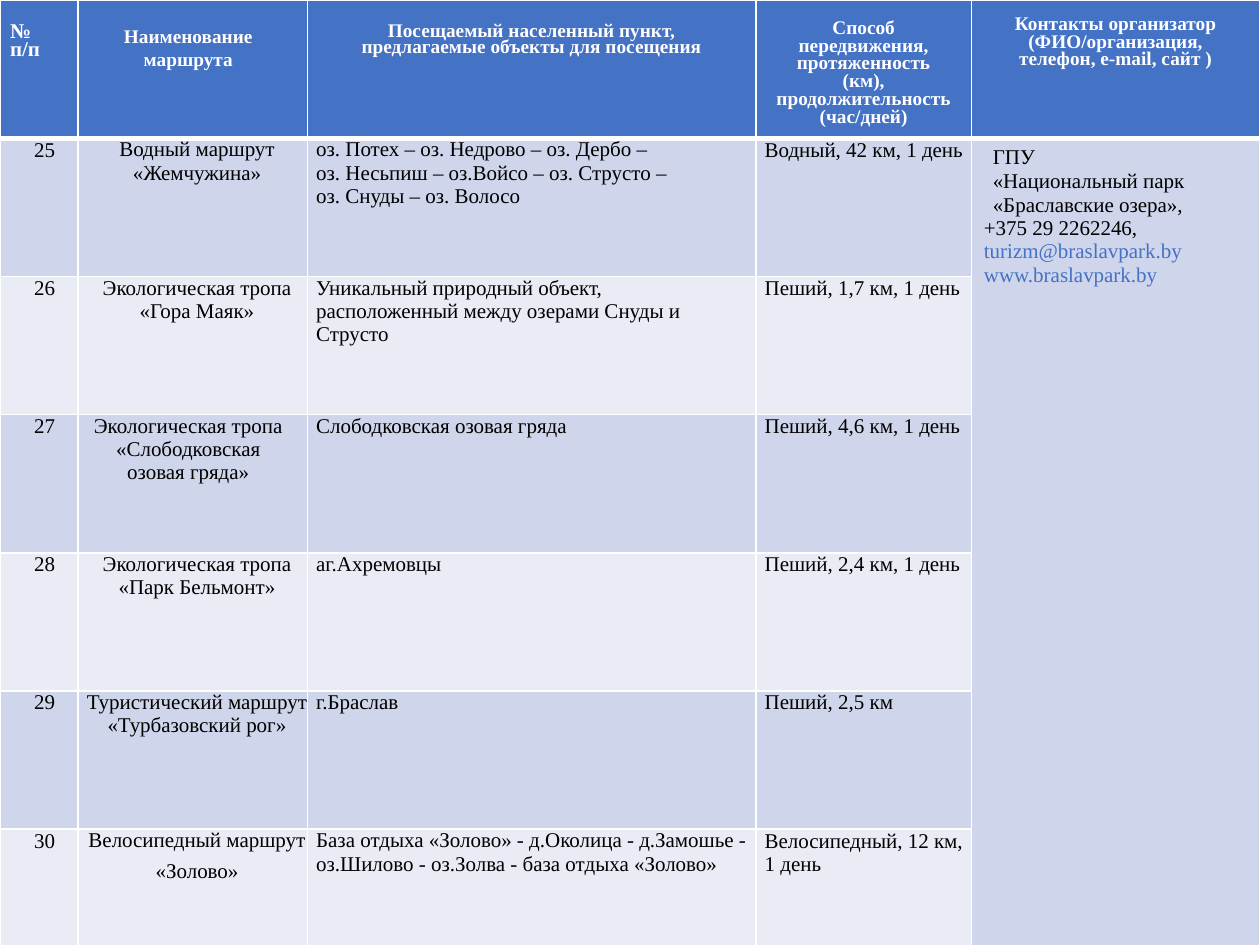
from dataclasses import dataclass
from typing import Optional

from lxml import etree
from pptx import Presentation
from pptx import util as u
from pptx.dml.color import RGBColor
from pptx.enum import text
from pptx.oxml.ns import qn

WIDTH, HEIGHT = 10, 7.5
COLUMN_SHARES = [0.062, 0.182, 0.356, 0.171, 0.229]
ROW_COUNT = 7
ROW_HEIGHT = 7.68 / ROW_COUNT
FONT = "Times New Roman"
COLORS = {
    "header": "4472C4", "odd": "CFD5EA", "even": "E9EBF5",
    "text": "000000", "link": "4472C4", "white": "FFFFFF",
}
LEFT, CENTER = text.PP_ALIGN.LEFT, text.PP_ALIGN.CENTER


@dataclass
class CellStyle:
    """Spacing is in points when a Pt length, in lines when a float."""
    align: text.PP_ALIGN = LEFT
    spacing: Optional[float] = u.Pt(13.3)
    left: float = 0.07
    right: float = 0
    top: float = 0
    size: float = 12
    color: str = "text"
    bold: bool = False
    space_before: float = 0


@dataclass
class Route:
    number: str
    name: str
    places: str
    travel: str
    name_right: float = 0
    places_right: float = 0


def header_style(spacing: float, left: float, right: float, top: float,
                 size: float = 11, align: text.PP_ALIGN = CENTER) -> CellStyle:
    return CellStyle(align, spacing, left, right, top, size, "white", True)


HEADERS = [
    ("№\nп/п", header_style(0.77, 0.08, 0, 0.19, 12, LEFT)),
    ("Наименование маршрута", header_style(u.Pt(13.4), 0.07, 0.14, 0.19)),
    ("Посещаемый населенный пункт,\nпредлагаемые объекты для посещения",
     header_style(0.77, 0.06, 0.06, 0.19)),
    ("Способ передвижения, протяженность (км), продолжительность\n(час/дней)",
     header_style(0.83, 0.16, 0.16, 0.16)),
    ("Контакты организатор (ФИО/организация, телефон, e-mail, сайт )",
     header_style(u.Pt(9.9), 0.18, 0.18, 0.14)),
]

ROUTES = [
    Route("25", "Водный маршрут «Жемчужина»",
          "оз. Потех – оз. Недрово – оз. Дербо –\n"
          "оз. Несьпиш – оз.Войсо – оз. Струсто –\n"
          "оз. Снуды – оз. Волосо", "Водный, 42 км, 1 день"),
    Route("26", "Экологическая тропа «Гора Маяк»",
          "Уникальный природный объект, расположенный между озерами "
          "Снуды и Струсто", "Пеший, 1,7 км, 1 день", places_right=0.5),
    Route("27", "Экологическая тропа «Слободковская озовая гряда»",
          "Слободковская озовая гряда", "Пеший, 4,6 км, 1 день", name_right=0.14),
    Route("28", "Экологическая тропа «Парк Бельмонт»", "аг.Ахремовцы",
          "Пеший, 2,4 км, 1 день"),
    Route("29", "Туристический маршрут «Турбазовский рог»", "г.Браслав",
          "Пеший, 2,5 км"),
    Route("30", "Велосипедный маршрут\n«Золово»",
          "База отдыха «Золово» - д.Околица - д.Замошье - оз.Шилово - "
          "оз.Золва - база отдыха «Золово»", "Велосипедный, 12 км, 1 день"),
]

CONTACTS = ("ГПУ\n«Национальный парк\n«Браславские озера»,\n+375 29 2262246,\n"
            "turizm@braslavpark.by www.braslavpark.by")


def rgb(name: str) -> RGBColor:
    return RGBColor.from_string(COLORS[name])


def paint_cell(cell, fill: str, bottom: float = 1, top: float = 1) -> None:
    """White borders on four sides, then a solid fill."""
    properties = cell._tc.get_or_add_tcPr()
    for side, width in (("L", 1), ("R", 1), ("T", top), ("B", bottom)):
        line = etree.SubElement(properties, qn(f"a:ln{side}"), w=str(u.Pt(width)))
        solid = etree.SubElement(line, qn("a:solidFill"))
        etree.SubElement(solid, qn("a:srgbClr"), val=COLORS["white"])
    cell.fill.solid()
    cell.fill.fore_color.rgb = rgb(fill)


def write_cell(cell, words: str, style: CellStyle) -> None:
    cell.text_frame.text = words
    cell.margin_left, cell.margin_right = u.Inches(style.left), u.Inches(style.right)
    cell.margin_top, cell.margin_bottom = u.Inches(style.top), 0
    for index, paragraph in enumerate(cell.text_frame.paragraphs):
        paragraph.alignment = style.align
        paragraph.line_spacing = style.spacing
        if index and style.space_before:
            paragraph.space_before = u.Pt(style.space_before)
        for run in paragraph.runs:
            run.font.name = FONT
            run.font.size = u.Pt(style.size)
            run.font.bold = style.bold
            run.font.color.rgb = rgb(style.color)


def write_contacts(cell) -> None:
    write_cell(cell, CONTACTS, CellStyle(spacing=None, left=0.1, right=0.1, top=0.05))
    paragraphs = cell.text_frame.paragraphs
    for paragraph in paragraphs[:3]:
        paragraph.line_spacing = u.Pt(13.8)
        paragraph._p.get_or_add_pPr().set("marL", str(u.Inches(0.07)))
    paragraphs[-1].runs[0].font.color.rgb = rgb("link")


def write_route(table, row: int, route: Route) -> None:
    cells = [
        (route.number, CellStyle(CENTER, u.Pt(13.4), 0.09)),
        (route.name, CellStyle(CENTER, right=route.name_right, space_before=4.2)),
        (route.places, CellStyle(right=route.places_right)),
        (route.travel, CellStyle(spacing=u.Pt(13.4))),
    ]
    for column, (words, style) in enumerate(cells):
        write_cell(table.cell(row, column), words, style)


def main() -> None:
    presentation = Presentation()
    presentation.slide_width = u.Inches(WIDTH)
    presentation.slide_height = u.Inches(HEIGHT)
    slide = presentation.slides.add_slide(presentation.slide_layouts[6])

    # Table grid
    table = slide.shapes.add_table(
        ROW_COUNT, len(COLUMN_SHARES), 0, 0,
        u.Inches(WIDTH), u.Inches(ROW_HEIGHT * ROW_COUNT)).table
    for column, share in zip(table.columns, COLUMN_SHARES):
        column.width = u.Inches(WIDTH * share)
    for row in table.rows:
        row.height = u.Inches(ROW_HEIGHT)

    # Cell fills and borders
    for row in range(ROW_COUNT):
        fill = "header" if row == 0 else "odd" if row % 2 else "even"
        for column in range(len(COLUMN_SHARES)):
            paint_cell(table.cell(row, column),
                       "odd" if row and column == 4 else fill,
                       bottom=3 if row == 0 else 1, top=3 if row == 1 else 1)
    table.cell(1, 4).merge(table.cell(ROW_COUNT - 1, 4))

    # Header, routes and contacts
    for column, (words, style) in enumerate(HEADERS):
        write_cell(table.cell(0, column), words, style)
    for row, route in enumerate(ROUTES, start=1):
        write_route(table, row, route)
    write_contacts(table.cell(1, 4))

    presentation.save("out.pptx")


if __name__ == "__main__":
    main()
